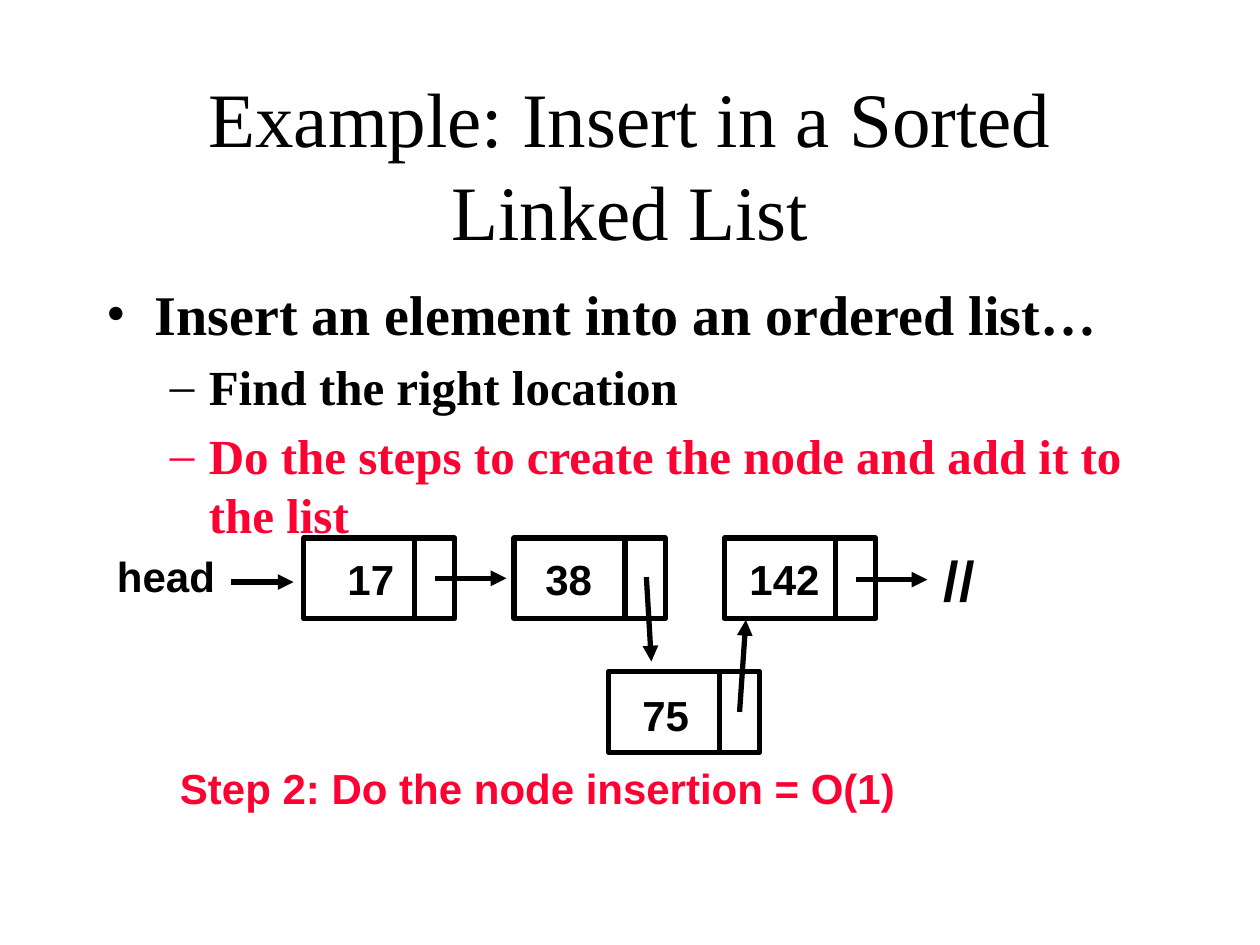
from lxml import etree
from pptx import Presentation
from pptx.dml.color import RGBColor
from pptx.enum.shapes import MSO_CONNECTOR, MSO_SHAPE
from pptx.enum.text import MSO_ANCHOR, MSO_AUTO_SIZE, PP_ALIGN
from pptx.oxml.ns import qn
from pptx.util import Inches, Pt

LINE, RECT = MSO_CONNECTOR.STRAIGHT, MSO_SHAPE.RECTANGLE
MIDDLE, CENTER = MSO_ANCHOR.MIDDLE, PP_ALIGN.CENTER
NONE, GROW = MSO_AUTO_SIZE.NONE, MSO_AUTO_SIZE.SHAPE_TO_FIT_TEXT

HUES = {"ink": "000000", "red": "FF0033"}
SERIF, SANS = "Times New Roman", "Arial"

TITLE = "Example: Insert in a Sorted Linked List"
# level, text, colour
POINTS = [
    (0, "Insert an element into an ordered list…", "ink"),
    (1, "Find the right location", "ink"),
    (1, "Do the steps to create the node and add it to the list", "red"),
]
# bullet, size, left margin, hanging indent
LEVELS = [("•", 32, 0.38, 0.38), ("–", 28, 0.81, 0.31)]

NODE_W, NODE_H, SPLIT = 1.2, 0.64, 0.88
ROW, LEFT, STEP = 4.27, 2.41, 1.67
NEW = (4.83, 5.33)
# value, node corner, label corner, label width
NODES = [
    ("17", (LEFT, ROW), (2.66, 4.34), 0.57),
    ("38", (LEFT + STEP, ROW), (4.23, 4.34), 0.57),
    ("142", (LEFT + 2 * STEP, ROW), (5.85, 4.34), 0.76),
    ("75", NEW, (5, 5.42), 0.57),
]
ARROWS = [
    ((1.83, 4.62), (2.33, 4.62)),
    ((3.45, 4.59), (4.02, 4.59)),
    ((5.13, 4.58), (5.17, 5.25)),
    ((5.87, 5.65), (5.92, 4.92)),
    ((6.79, 4.6), (7.36, 4.6)),
]
# text, corner, width, height, size, colour
NOTES = [
    ("head", (0.83, 4.32), 0.98, 0.5, 24, "ink"),
    ("//", (7.39, 4.28), 0.45, 0.63, 32, "ink"),
    ("Step 2: Do the node insertion = O(1)", (1.33, 6), 5.88, 0.5, 24, "red"),
]


def color(name):
    return RGBColor.from_string(HUES[name])


def add_run(para, text, face, size, hue="ink", bold=True):
    run = para.add_run()
    run.text = text
    font = run.font
    font.name, font.size, font.bold = face, Pt(size), bold
    font.color.rgb = color(hue)


def add_label(slide, text, spot, width, height, size=24, hue="ink"):
    box = slide.shapes.add_textbox(*map(Inches, (*spot, width, height)))
    frame = box.text_frame
    frame.word_wrap, frame.auto_size = False, GROW
    add_run(frame.paragraphs[0], text, SANS, size, hue)


def add_line(slide, start, end, arrow=False):
    link = slide.shapes.add_connector(LINE, *map(Inches, (*start, *end)))
    link.line.width = Pt(3)
    link.line.color.rgb = color("ink")
    props = link._element.spPr
    if arrow:
        etree.SubElement(props.find(qn("a:ln")), qn("a:tailEnd"), type="triangle")
    etree.SubElement(props, qn("a:effectLst"))


def add_node(slide, x, y):
    box = slide.shapes.add_shape(RECT, *map(Inches, (x, y, NODE_W, NODE_H)))
    box.shadow.inherit = False
    box.fill.background()
    box.line.width = Pt(3)
    box.line.color.rgb = color("ink")
    add_line(slide, (x + SPLIT, y), (x + SPLIT, y + NODE_H))


def set_title(slide):
    title = slide.shapes.title
    title.left, title.top, title.width, title.height = map(
        Inches, (0.75, 0.67, 8.5, 1.25))
    frame = title.text_frame
    frame.word_wrap, frame.auto_size = True, NONE
    frame.vertical_anchor = MIDDLE
    para = frame.paragraphs[0]
    para.alignment = CENTER
    add_run(para, TITLE, SERIF, 44, bold=False)


def add_points(slide):
    box = slide.shapes.add_textbox(*map(Inches, (0.75, 2.17, 8.5, 4.5)))
    frame = box.text_frame
    frame.word_wrap, frame.auto_size = True, NONE
    for i, (level, text, hue) in enumerate(POINTS):
        para = frame.add_paragraph() if i else frame.paragraphs[0]
        mark, size, margin, hang = LEVELS[level]
        para.level = level
        para.space_before = Pt(size * 0.2)
        props = para._p.get_or_add_pPr()
        props.set("marL", str(Inches(margin)))
        props.set("indent", str(-Inches(hang)))
        etree.SubElement(props, qn("a:buFont"), typeface=SERIF)
        etree.SubElement(props, qn("a:buChar"), char=mark)
        add_run(para, text, SERIF, size, hue)


def main():
    deck = Presentation()
    deck.slide_width, deck.slide_height = Inches(10), Inches(7.5)
    slide = deck.slides.add_slide(deck.slide_layouts[5])
    set_title(slide)
    add_points(slide)
    for value, corner, spot, width in NODES:
        add_node(slide, *corner)
        add_label(slide, value, spot, width, 0.5)
    for start, end in ARROWS:
        add_line(slide, start, end, arrow=True)
    for note in NOTES:
        add_label(slide, *note)
    deck.save("out.pptx")


if __name__ == "__main__":
    main()
